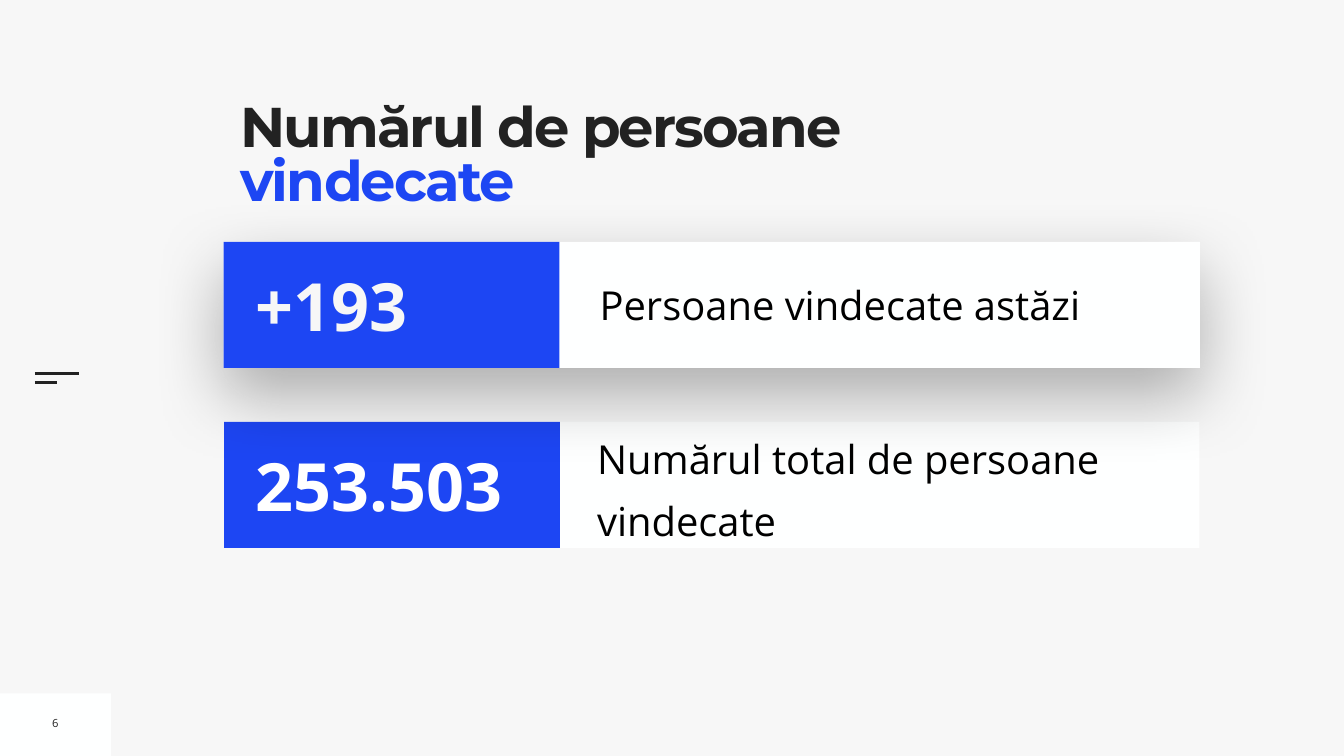
import pptx
import pptx.util
import pptx.dml.color
import pptx.enum.shapes
import pptx.enum.text
import pptx.oxml.ns
from dataclasses import dataclass
from lxml import etree

Inches = pptx.util.Inches
Pt = pptx.util.Pt
Align = pptx.enum.text.PP_ALIGN
Anchor = pptx.enum.text.MSO_ANCHOR
qn = pptx.oxml.ns.qn


@dataclass(frozen=True)
class Theme:
    back: str = "F7F7F7"
    card: str = "FEFFFF"
    blue: str = "1D46F3"
    dark: str = "222222"
    black: str = "000000"
    white: str = "FFFFFF"
    head: str = "Montserrat"
    body: str = "Open Sans"
    title: int = 80
    figure: int = 95
    label: int = 57
    page: int = 16


THEME = Theme()


def rgb(code):
    return pptx.dml.color.RGBColor.from_string(code)


def panel(slide, box, color):
    kind = pptx.enum.shapes.MSO_SHAPE.RECTANGLE
    shape = slide.shapes.add_shape(kind, *map(Inches, box))
    shape.shadow.inherit = False
    shape.fill.solid()
    shape.fill.fore_color.rgb = rgb(color)
    shape.line.fill.background()
    return shape


def style(font, name, size, color, bold=False):
    font.name = name
    font.size = Pt(size)
    font.color.rgb = rgb(color)
    font.bold = bold


def write(slide, box, text, size, color, bold=False, inset=0.1, wrap=True):
    frame = slide.shapes.add_textbox(*map(Inches, box)).text_frame
    frame.word_wrap = wrap
    frame.vertical_anchor = Anchor.MIDDLE
    frame.margin_left = frame.margin_right = Inches(inset)
    frame.margin_top = frame.margin_bottom = Inches(inset)
    para = frame.paragraphs[0]
    para.text = text
    style(para.font, THEME.body, size, color, bold)
    return para


def shade(shape):
    effects = shape._element.spPr.find(qn("a:effectLst"))
    outer = etree.SubElement(
        effects, qn("a:outerShdw"), blurRad=str(Pt(100)), dist=str(Pt(40)),
        dir="5400000", algn="ctr", rotWithShape="0")
    color = etree.SubElement(outer, qn("a:srgbClr"), val=THEME.black)
    etree.SubElement(color, qn("a:alpha"), val="30000")


def title(slide, box):
    frame = slide.shapes.add_textbox(*map(Inches, box)).text_frame
    frame.word_wrap = True
    frame.margin_left = frame.margin_right = 0
    frame.margin_top = frame.margin_bottom = 0
    para = frame.paragraphs[0]
    para.line_spacing = 0.8
    parts = (("Numărul de persoane ", THEME.dark), ("vindecate", THEME.blue))
    for text, color in parts:
        run = para.add_run()
        run.text = text
        style(run.font, THEME.head, THEME.title, color, True)
        run.font._element.set("spc", "-270")


def row(slide, box, figure, color, raised=False):
    left, top, width, height = box
    card = panel(slide, box, THEME.card)
    if raised:
        shade(card)
    panel(slide, (left, top, 6.66, height), THEME.blue)
    write(slide, (left + 0.53, top + 0.35, 6.03, 1.8), figure,
          THEME.figure, color, True)


def total(slide, box):
    left, top, width, height = box
    row(slide, box, "253.503", THEME.white)
    para = write(slide, (left + 7.4, top + 0.02, width - 7.4, 2.36),
                 "Numărul total de persoane vindecate",
                 THEME.label, THEME.black, inset=0)
    para.line_spacing = 1.3
    para.space_before = Pt(20)


def today(slide, box):
    left, top, width, height = box
    row(slide, box, "+193", THEME.back, True)
    write(slide, (left + 7.36, top + 0.67, 11.76, 1.16),
          "Persoane vindecate astăzi", THEME.label, THEME.black)


def mark(slide, left, top):
    kind = pptx.enum.shapes.MSO_CONNECTOR.STRAIGHT
    for drop, width in ((0, 0.88), (0.18, 0.44)):
        level = Inches(top + drop)
        line = slide.shapes.add_connector(
            kind, Inches(left), level, Inches(left + width), level)
        line.line.color.rgb = rgb(THEME.dark)
        line.line.width = Pt(3)
        etree.SubElement(line._element.spPr, qn("a:effectLst"))


def page(slide, box):
    left, top, width, height = box
    panel(slide, box, THEME.card)
    para = write(slide, (left + 0.93, top + 0.33, 0.34, 0.51), "6",
                 THEME.page, THEME.dark, wrap=False)
    para.alignment = Align.CENTER


def main():
    deck = pptx.Presentation()
    deck.slide_width = Inches(26.67)
    deck.slide_height = Inches(15)
    slide = deck.slides.add_slide(deck.slide_layouts[6])
    slide.background.fill.solid()
    slide.background.fill.fore_color.rgb = rgb(THEME.back)
    page(slide, (0, 13.76, 2.2, 1.24))
    mark(slide, 0.69, 7.41)
    title(slide, (4.77, 2.07, 13.01, 2.73))
    total(slide, (4.45, 8.37, 19.35, 2.5))
    today(slide, (4.44, 4.8, 19.37, 2.5))
    deck.save("out.pptx")


if __name__ == "__main__":
    main()
